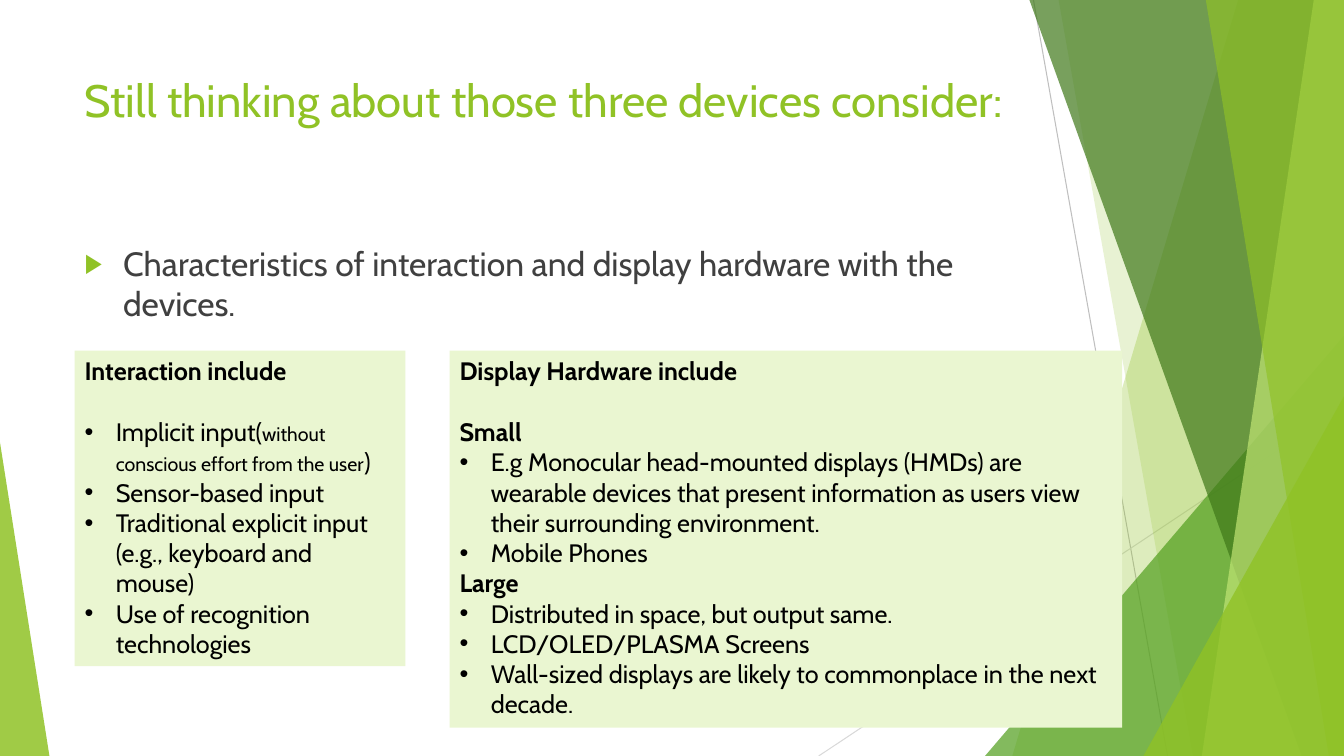
from lxml.etree import SubElement
from pptx import Presentation
from pptx.dml.color import RGBColor
from pptx.enum.shapes import MSO_CONNECTOR, MSO_SHAPE
from pptx.enum.text import MSO_ANCHOR, MSO_AUTO_SIZE, PP_ALIGN
from pptx.oxml.ns import qn
from pptx.util import Inches, Pt

FONT = "Cabin"
GREEN, DARK_TEXT, BLACK, PALE_GREEN = "90C226", "404040", "000000", "EAF6D1"
WIDTH, HEIGHT = 13.33, 7.5

# Each card line: kind, then (text, size) pieces
INTERACTION = [
    ("title", [("Interaction include", 18)]),
    ("bullet", [("Implicit input(", 18),
                ("without conscious effort from the user", 14), (")", 18)]),
    ("bullet", [("Sensor-based input", 18)]),
    ("bullet", [("Traditional explicit input (e.g., keyboard and mouse)", 18)]),
    ("bullet", [("Use of recognition technologies", 18)]),
]
DISPLAY_HARDWARE = [
    ("title", [("Display Hardware include", 18)]),
    ("heading", [("Small", 18)]),
    ("bullet", [("E.g Monocular head-mounted displays (HMDs) are wearable devices that "
                 "present information as users view their surrounding environment.", 18)]),
    ("bullet", [("Mobile Phones", 18)]),
    ("heading", [("Large", 18)]),
    ("bullet", [("Distributed in space, but output same.", 18)]),
    ("bullet", [("LCD/OLED/PLASMA Screens", 18)]),
    ("bullet", [("Wall-sized displays are likely to commonplace in the next decade.", 18)]),
]


def rgb(color):
    return RGBColor.from_string(color)


def paint(shape, color, opacity=100):
    shape.shadow.inherit = False
    shape.line.fill.background()
    shape.fill.solid()
    shape.fill.fore_color.rgb = rgb(color)
    if opacity < 100:
        solid = shape.element.spPr.find(qn("a:solidFill"))
        SubElement(solid[0], qn("a:alpha"), val=str(opacity * 1000))


def style(run, size, color, bold=False):
    run.font.name = FONT
    run.font.size = Pt(size)
    run.font.bold = bold
    run.font.color.rgb = rgb(color)


def add_bullet(paragraph, symbol, indent, color=None, percent=100):
    props = paragraph._p.get_or_add_pPr()
    props.set("marL", str(Inches(indent)))
    props.set("indent", str(Inches(-indent)))
    if color:
        SubElement(SubElement(props, qn("a:buClr")), qn("a:srgbClr"), val=color)
    SubElement(props, qn("a:buSzPct"), val=str(percent * 1000))
    SubElement(props, qn("a:buFont"), typeface="Arial")
    SubElement(props, qn("a:buChar"), char=symbol)


def add_hairline(slide, start, end, color):
    line = slide.shapes.add_connector(
        MSO_CONNECTOR.STRAIGHT, *map(Inches, start + end))
    line.line.color.rgb = rgb(color)
    line.line.width = Pt(0.75)
    SubElement(line.element.spPr, qn("a:effectLst"))


def add_blade(slide, top_x, bottom_x, color, opacity):
    """Slanted panel reaching from its left edge to the right slide edge."""
    corners = [(top_x, 0), (WIDTH, 0), (WIDTH, HEIGHT), (bottom_x, HEIGHT)]
    points = [(Inches(x), Inches(y)) for x, y in corners]
    builder = slide.shapes.build_freeform(*points[0])
    builder.add_line_segments(points[1:])
    paint(builder.convert_to_shape(), color, opacity)


def add_corner(slide, left, top, width, apex, color, opacity):
    """Triangle standing on the bottom slide edge."""
    corner = slide.shapes.add_shape(
        MSO_SHAPE.ISOSCELES_TRIANGLE, Inches(left), Inches(top),
        Inches(width), Inches(HEIGHT - top))
    corner.adjustments[0] = apex
    paint(corner, color, opacity)


def add_facets(slide):
    add_hairline(slide, (10.25, 0), (11.58, HEIGHT), "BFBFBF")
    add_hairline(slide, (WIDTH, 4.03), (8.12, HEIGHT), "D9D9D9")
    add_blade(slide, 12.28, 10.04, GREEN, 30)
    add_blade(slide, 10.5, 11.83, GREEN, 20)
    add_corner(slide, 9.77, 3.33, 3.56, 1, "54A021", 72)
    add_blade(slide, 10.21, 12.91, "3F7819", 70)
    add_blade(slide, 13.03, 11.92, "C0E474", 70)
    add_blade(slide, 11.96, 13.18, GREEN, 65)
    add_corner(slide, 11.34, 3.93, 1.99, 1, GREEN, 80)
    add_corner(slide, 0, 4.39, 0.49, 0, GREEN, 85)


def fill_placeholder(holder, box, text, size, color):
    """Place the placeholder in front of the facets and return its paragraph."""
    holder.element.getparent().append(holder.element)
    holder.left, holder.top, holder.width, holder.height = map(Inches, box)
    frame = holder.text_frame
    frame.text = text
    frame.word_wrap = True
    frame.auto_size = MSO_AUTO_SIZE.NONE
    frame.vertical_anchor = MSO_ANCHOR.TOP
    paragraph = frame.paragraphs[0]
    paragraph.alignment = PP_ALIGN.LEFT
    style(paragraph.runs[0], size, color)
    return paragraph


def add_card(slide, box, lines):
    card = slide.shapes.add_shape(MSO_SHAPE.RECTANGLE, *map(Inches, box))
    paint(card, PALE_GREEN)
    frame = card.text_frame
    frame.word_wrap = True
    frame.vertical_anchor = MSO_ANCHOR.TOP
    for index, (kind, pieces) in enumerate(lines):
        paragraph = frame.add_paragraph() if index else frame.paragraphs[0]
        paragraph.alignment = PP_ALIGN.LEFT
        if kind == "title":
            paragraph.space_after = Pt(21.8)
        if kind == "bullet":
            add_bullet(paragraph, "•", 0.31)
        for text, size in pieces:
            run = paragraph.add_run()
            run.text = text
            style(run, size, BLACK, kind != "bullet")


def build_devices_slide(deck):
    slide = deck.slides.add_slide(deck.slide_layouts[1])
    add_facets(slide)
    title, body = slide.placeholders
    fill_placeholder(title, (0.74, 0.67, 9.4, 1.44),
                     "Still thinking about those three devices consider:", 32.4, GREEN)
    topic = fill_placeholder(
        body, (0.74, 2.36, 9.4, 4.24),
        "Characteristics of interaction and display hardware with the devices.",
        24, DARK_TEXT)
    topic.space_before = Pt(10)
    add_bullet(topic, "▶", 0.38, GREEN, 80)
    add_card(slide, (0.74, 3.48, 3.28, 3.13), INTERACTION)
    add_card(slide, (4.46, 3.48, 6.67, 3.74), DISPLAY_HARDWARE)


def main():
    deck = Presentation()
    deck.slide_width, deck.slide_height = Inches(WIDTH), Inches(HEIGHT)
    build_devices_slide(deck)
    deck.save("out.pptx")


if __name__ == "__main__":
    main()
